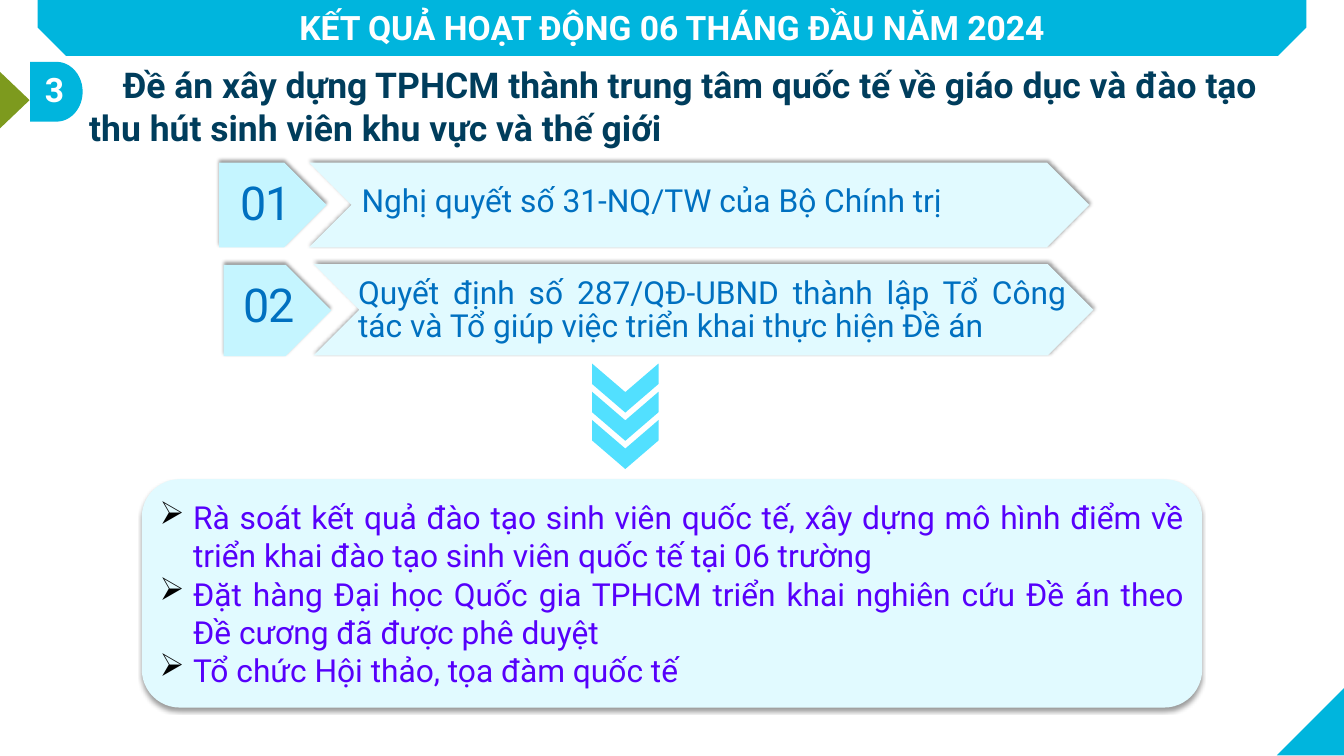
from dataclasses import dataclass

from lxml.etree import SubElement
from pptx import Presentation
from pptx.dml.color import RGBColor
from pptx.enum.shapes import MSO_SHAPE
from pptx.enum.text import MSO_ANCHOR, PP_ALIGN
from pptx.oxml.ns import qn
from pptx.util import Inches, Pt

FONT = "Roboto"
COLORS = {
    "cyan": "00B5DD", "green": "7D9A1E", "pale": "E1FAFF", "tag": "C5F5FF",
    "arrow": "52E0FF", "navy": "003D5C", "blue": "0070C0", "violet": "5600FB",
    "white": "FFFFFF", "black": "000000",
}


@dataclass
class Box:
    left: float
    top: float
    width: float
    height: float

    def place(self) -> tuple:
        return tuple(map(Inches, (self.left, self.top, self.width, self.height)))


@dataclass
class Style:
    size: float
    color: str
    bold: bool = False
    align: PP_ALIGN = PP_ALIGN.LEFT
    pitch: float = 0
    track: int = 0


@dataclass
class Basis:
    num: str
    text: str
    tag: Box
    body: Box
    label: Box
    words: Box
    align: PP_ALIGN


def color(name: str) -> RGBColor:
    return RGBColor.from_string(COLORS[name])


def add_shape(slide, kind, box: Box, fill: str, turn: float = 0, adj=(), shade=None):
    """Draw a plain shape; shade is the shadow direction in degrees."""
    shape = slide.shapes.add_shape(kind, *box.place())
    shape.fill.solid()
    shape.fill.fore_color.rgb = color(fill)
    shape.line.fill.background()
    shape.shadow.inherit = False
    shape.rotation = turn
    for i, value in enumerate(adj):
        shape.adjustments[i] = value
    if shade is not None:
        effects = shape._element.spPr.find(qn("a:effectLst"))
        outer = SubElement(effects, qn("a:outerShdw"), blurRad=str(Pt(4)),
                           dist=str(Pt(3)), dir=str(shade * 60000),
                           algn="t", rotWithShape="0")
        tone = SubElement(outer, qn("a:srgbClr"), val=COLORS["black"])
        SubElement(tone, qn("a:alpha"), val="40000")
    return shape


def format_para(para, text: str, style: Style) -> None:
    para.text = text
    para.alignment = style.align
    if style.pitch:
        para.line_spacing = Pt(style.pitch)
    font = para.font
    font.name, font.size, font.bold = FONT, Pt(style.size), style.bold
    font.color.rgb = color(style.color)
    if style.track:
        para._p.pPr.find(qn("a:defRPr")).set("spc", str(style.track))


def add_text(slide, box: Box, text: str, style: Style, inset: bool = True):
    frame = slide.shapes.add_textbox(*box.place()).text_frame
    frame.word_wrap = True
    if not inset:
        frame.margin_left = frame.margin_right = 0
        frame.margin_top = frame.margin_bottom = 0
    format_para(frame.paragraphs[0], text, style)
    return frame.paragraphs[0]


def set_indent(para, left: float, first: float):
    props = para._p.get_or_add_pPr()
    props.set("marL", str(Inches(left)))
    props.set("indent", str(Inches(first)))
    return props


def add_bullet(para) -> None:
    props = set_indent(para, 0.5, -0.5)
    tone = SubElement(props, qn("a:buClr"))
    SubElement(tone, qn("a:srgbClr"), val=COLORS["black"])
    SubElement(props, qn("a:buChar"), char="➢")


def add_basis(slide, item: Basis) -> None:
    add_shape(slide, MSO_SHAPE.CHEVRON, item.body, "pale", shade=270)
    add_shape(slide, MSO_SHAPE.PENTAGON, item.tag, "tag", shade=270)
    add_text(slide, item.words, item.text,
             Style(34, "blue", align=item.align, pitch=36), inset=False)
    add_text(slide, item.label, item.num,
             Style(50, "blue", pitch=65, track=-100), inset=False)


BASES = [
    Basis("01", "Nghị quyết số 31-NQ/TW của Bộ Chính trị",
          Box(3.26, 2.42, 1.6, 1.26), Box(4.6, 2.42, 11.61, 1.26),
          Box(3.58, 2.52, 1.05, 1.07), Box(5.38, 2.76, 10.59, 0.63),
          PP_ALIGN.LEFT),
    Basis("02", "Quyết định số 287/QĐ-UBND thành lập Tổ Công tác và Tổ giúp "
          "việc triển khai thực hiện Đề án",
          Box(3.33, 3.94, 1.6, 1.36), Box(4.67, 3.93, 11.6, 1.36),
          Box(3.62, 4.04, 1.05, 1.15), Box(5.33, 4.12, 10.54, 2.03),
          PP_ALIGN.JUSTIFY),
]
TASKS = [
    "Rà soát kết quả đào tạo sinh viên quốc tế, xây dựng mô hình điểm về "
    "triển khai đào tạo sinh viên quốc tế tại 06 trường",
    "Đặt hàng Đại học Quốc gia TPHCM triển khai nghiên cứu Đề án theo "
    "Đề cương đã được phê duyệt",
    "Tổ chức Hội thảo, tọa đàm quốc tế",
]


def main() -> None:
    deck = Presentation()
    deck.slide_width, deck.slide_height = Inches(20), Inches(11.25)
    slide = deck.slides.add_slide(deck.slide_layouts[6])

    # Page trim
    add_shape(slide, MSO_SHAPE.RIGHT_TRIANGLE, Box(19, 10.22, 1.02, 1.02), "cyan", 270)
    add_shape(slide, MSO_SHAPE.ISOSCELES_TRIANGLE, Box(-0.2, 1.27, 0.84, 0.44),
              "green", 90)
    add_shape(slide, MSO_SHAPE.SNIP_2_SAME_RECTANGLE, Box(0.56, -0.01, 18.88, 0.84),
              "cyan", 180, adj=(0.5, 0))

    # Title and heading
    add_text(slide, Box(0.84, 0.05, 18.32, 1.31),
             "KẾT QUẢ HOẠT ĐỘNG 06 THÁNG ĐẦU NĂM 2024",
             Style(36, "white", True, PP_ALIGN.CENTER))
    head = add_text(slide, Box(1.23, 0.89, 18.16, 1.38),
                    "Đề án xây dựng TPHCM thành trung tâm quốc tế về giáo dục và "
                    "đào tạo thu hút sinh viên khu vực và thế giới",
                    Style(38, "navy", True))
    set_indent(head, 0, 0.5)

    # Legal bases
    for item in BASES:
        add_basis(slide, item)

    # Down arrows
    for i in range(3):
        add_shape(slide, MSO_SHAPE.CHEVRON, Box(8.94, 5.28 + 0.42 * i, 0.73, 0.99),
                  "arrow", 90, adj=(0.583,))

    # Task panel
    panel = add_shape(slide, MSO_SHAPE.FLOWCHART_ALTERNATE_PROCESS,
                      Box(2.11, 7.13, 15.78, 3.4), "pale", shade=90)
    frame = panel.text_frame
    frame.word_wrap = True
    frame.vertical_anchor = MSO_ANCHOR.MIDDLE
    for i, task in enumerate(TASKS):
        para = frame.add_paragraph() if i else frame.paragraphs[0]
        add_bullet(para)
        format_para(para, task, Style(34, "violet", align=PP_ALIGN.JUSTIFY))

    # Section number
    add_shape(slide, MSO_SHAPE.FLOWCHART_DELAY, Box(0.45, 0.92, 0.78, 0.89), "cyan")
    add_text(slide, Box(0.57, 0.97, 0.66, 0.71), "3", Style(36, "white", True))

    deck.save("out.pptx")


if __name__ == "__main__":
    main()
